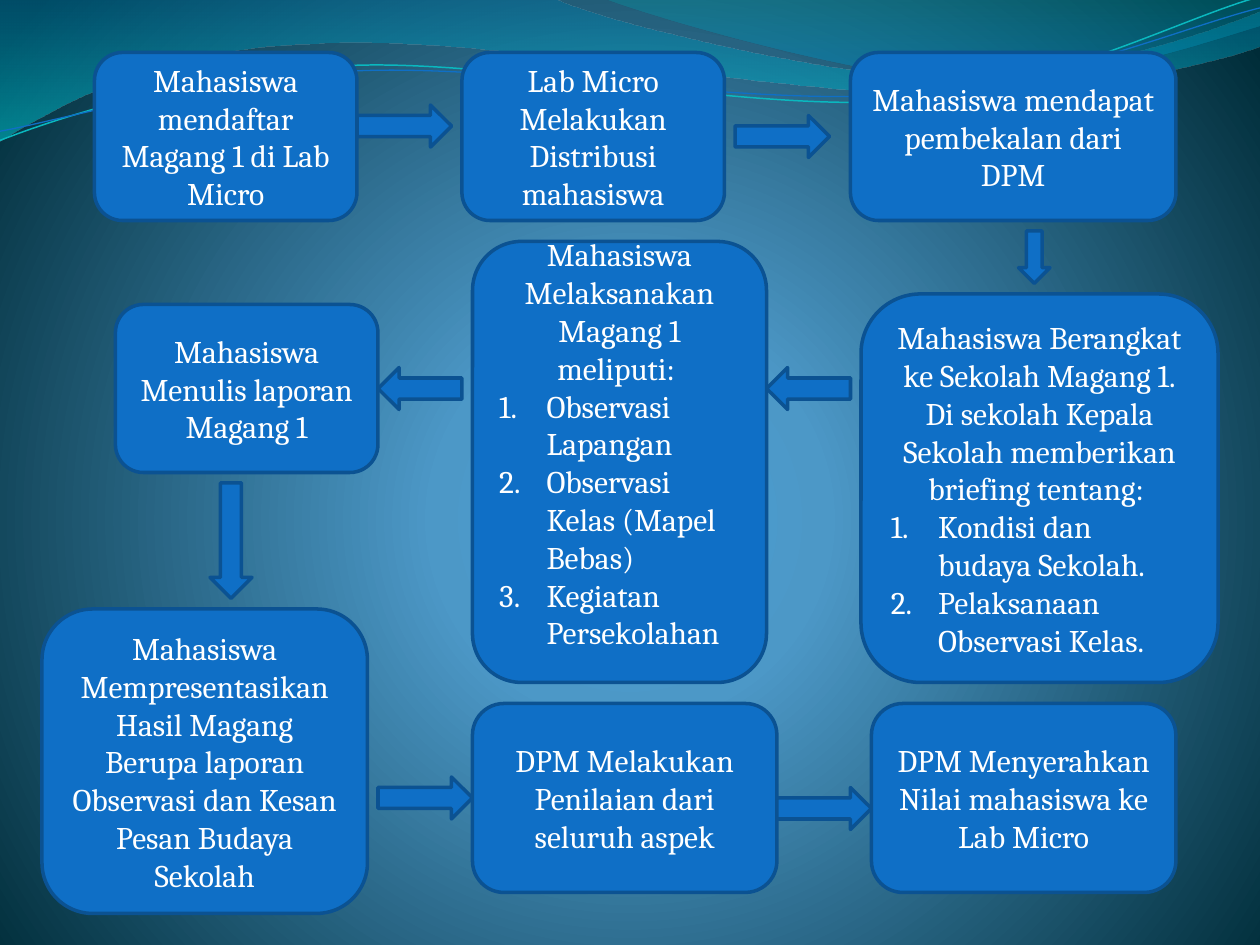
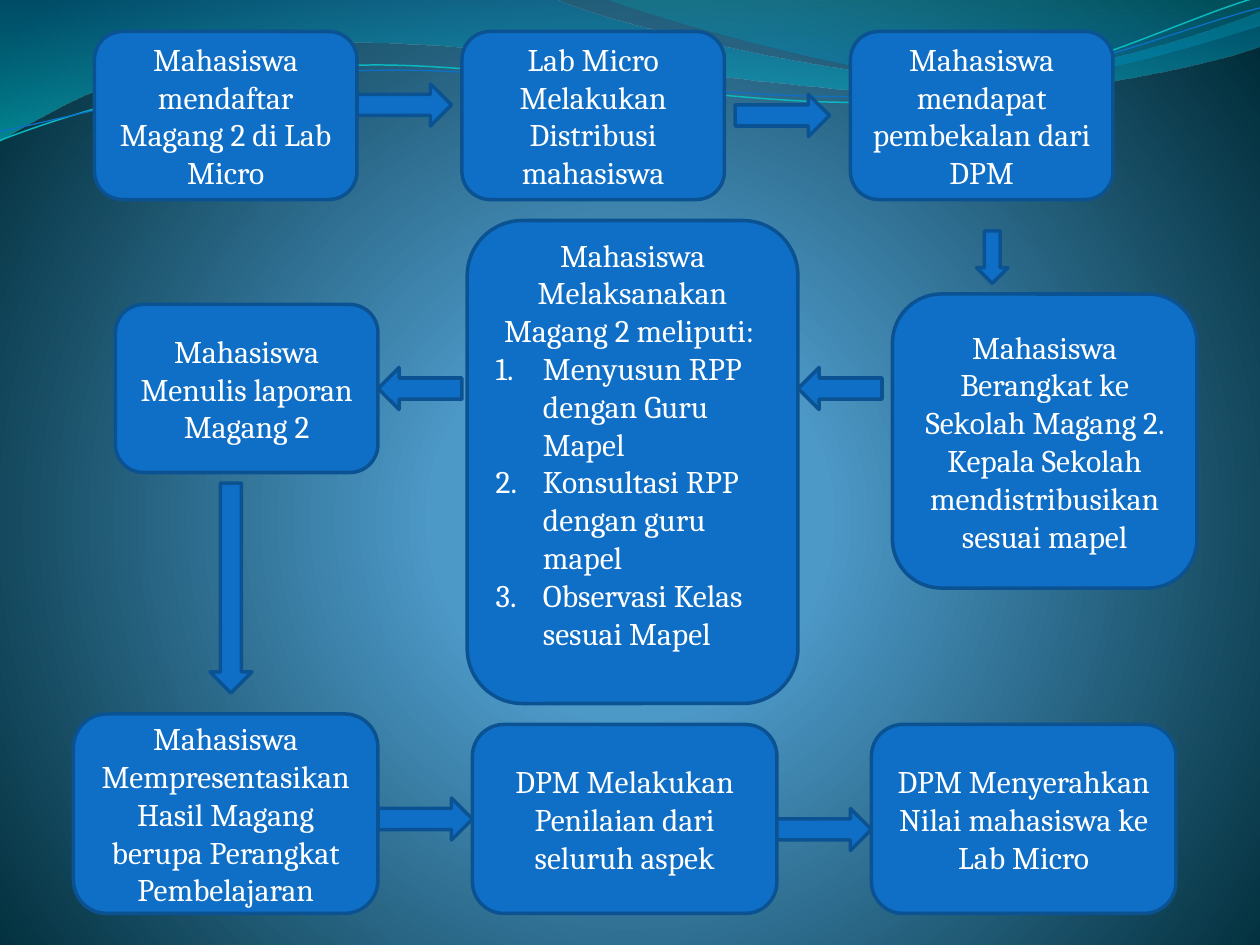
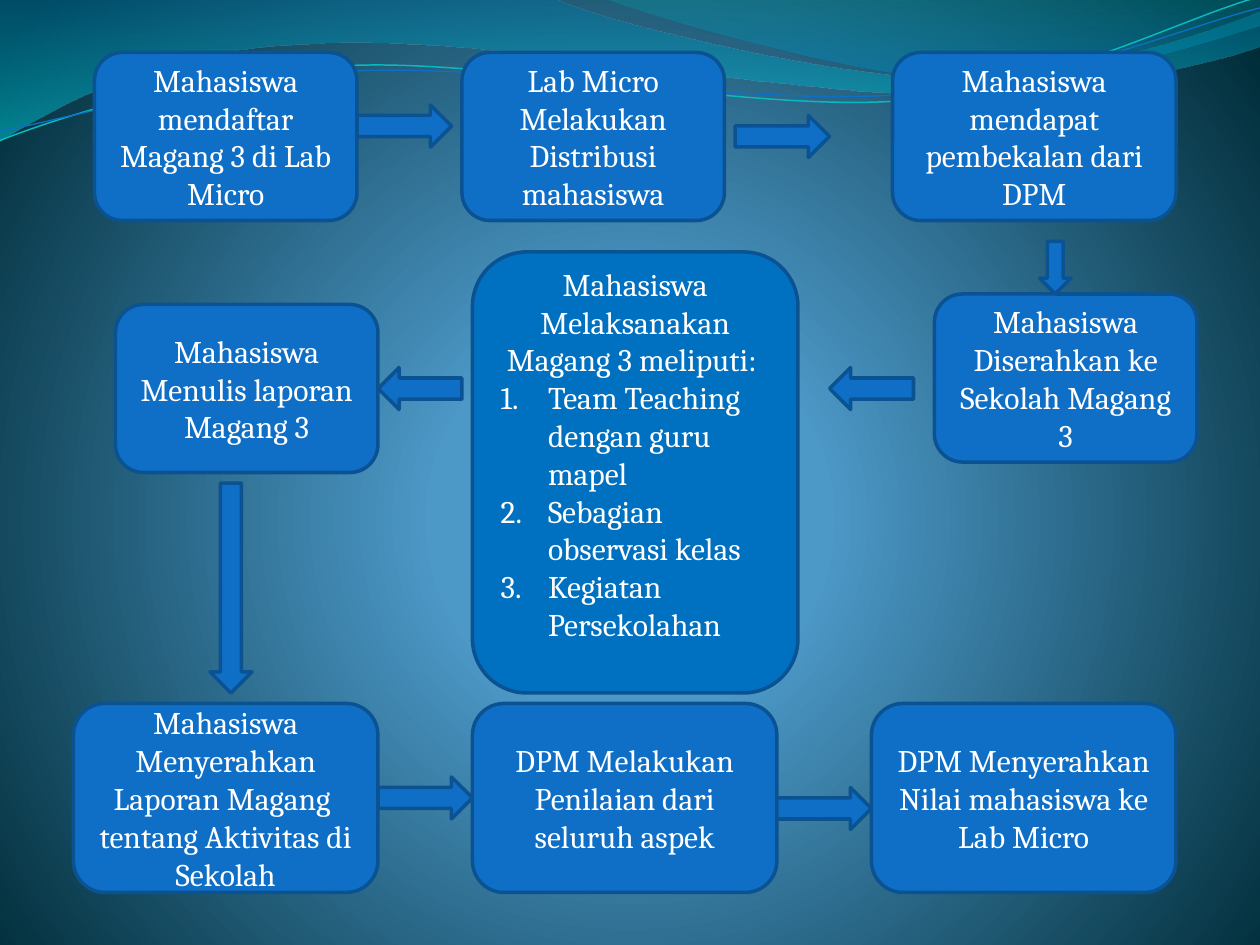
from dataclasses import dataclass

from lxml import etree
from pptx import Presentation
from pptx.dml.color import RGBColor
from pptx.enum.shapes import MSO_SHAPE
from pptx.enum.text import MSO_ANCHOR, PP_ALIGN
from pptx.oxml import parse_xml
from pptx.oxml.ns import nsdecls, qn
from pptx.util import Pt

PX = 9525
ROUNDED = MSO_SHAPE.ROUNDED_RECTANGLE
RIGHT, DOWN = MSO_SHAPE.RIGHT_ARROW, MSO_SHAPE.DOWN_ARROW
CENTER, LEFT = PP_ALIGN.CENTER, PP_ALIGN.LEFT
MIDDLE = MSO_ANCHOR.MIDDLE


@dataclass(frozen=True)
class Theme:
    font: str = "Cambria"
    size: int = 18
    text: str = "FFFFFF"
    box: str = "0F6FC6"
    core_box: str = "0070C0"
    outline: str = "0B5292"
    outline_width: int = 2
    strand: str = "0AB8BF"
    # Gradient stops: position %, colour, opacity %
    glow: tuple = ((0, "4AA0D6", 100), (25, "4C98C7", 100), (100, "002C38", 100))
    wide_wave: tuple = ((0, "0074A1", 45), (100, "00C6CF", 55))
    short_wave: tuple = ((0, "00A1A9", 30), (80, "008BBF", 45))


THEME = Theme()
DOWNWARD = '<a:lin ang="5400000" scaled="1"/>'
FROM_CENTRE = ('<a:path path="circle"><a:fillToRect l="10000" t="110000" '
               'r="10000" b="100000"/></a:path>')


def set_gradient(host, stops, direction):
    """Replace the first gradient fill inside the element host."""
    stop_xml = "".join(
        f'<a:gs pos="{pos * 1000}"><a:srgbClr val="{color}">'
        f'<a:alpha val="{opacity * 1000}"/></a:srgbClr></a:gs>'
        for pos, color, opacity in stops)
    old = host.find(".//" + qn("a:gradFill"))
    old.getparent().replace(old, parse_xml(
        f'<a:gradFill {nsdecls("a")} rotWithShape="1">'
        f'<a:gsLst>{stop_xml}</a:gsLst>{direction}</a:gradFill>'))


def add_block(slide, kind, bounds, fill):
    block = slide.shapes.add_shape(kind, *(value * PX for value in bounds))
    block.shadow.inherit = False
    block.fill.solid()
    block.fill.fore_color.rgb = RGBColor.from_string(fill)
    block.line.color.rgb = RGBColor.from_string(THEME.outline)
    block.line.width = Pt(THEME.outline_width)
    return block


prs = Presentation()
prs.slide_width, prs.slide_height = 960 * PX, 720 * PX
blank = prs.slide_layouts[6]
for placeholder in list(blank.placeholders):
    blank.shapes.element.remove(placeholder.element)

prs.slide_master.background.fill.gradient()
set_gradient(prs.slide_master.element, THEME.glow, FROM_CENTRE)

# Each step of a path is one end point, or two control points and an end point
WAVES = [
    (THEME.wide_wave, (0, 0), [
        [(422, -1)],
        [(457, 16), (637, 60), (728, 60)],
        [(819, 60), (920, 25), (960, 9)],
        [(961, 35)],
        [(944, 42), (835, 73), (716, 72)],
        [(597, 72), (367, 27), (247, 33)],
        [(124, 35), (44, 80), (-1, 108)],
        [(0, 0)]]),
    (THEME.short_wave, (460, -1), [
        [(489, 11), (655, 60), (738, 62)],
        [(822, 66), (923, 31), (960, 20)],
        [(960, 0)],
        [(460, -1)]]),
]
STRANDS = [
    (THEME.strand, 0.85, (0, 107), [
        [(46, 89), (152, 55), (266, 50)],
        [(379, 45), (569, 85), (684, 77)],
        [(800, 68), (900, 14), (958, -2)]]),
    (THEME.box, 0.75, (0, 100), [
        [(45, 92), (157, 59), (272, 54)],
        [(387, 49), (573, 81), (688, 72)],
        [(803, 64), (903, 20), (960, 6)]]),
]

first_slide = prs.slides.add_slide(blank)
ribbons = []
for start, steps, closed in ([(start, steps, True) for _, start, steps in WAVES]
                             + [(start, steps, False) for _, _, start, steps in STRANDS]):
    builder = first_slide.shapes.build_freeform(*start, scale=PX)
    builder.add_line_segments([point for step in steps for point in step], close=closed)
    ribbon = builder.convert_to_shape()
    ribbon.shadow.inherit = False
    ribbons.append(ribbon)

    # Turn the three segments of every curved step into one Bézier curve
    segments = iter(ribbon.element.findall(".//" + qn("a:lnTo")))
    for step in steps:
        parts = [next(segments) for _ in step]
        if len(parts) == 3:
            curve = etree.Element(qn("a:cubicBezTo"))
            parts[0].addprevious(curve)
            for part in parts:
                curve.append(part[0])
                part.getparent().remove(part)

for ribbon, (stops, _, _) in zip(ribbons, WAVES):
    ribbon.fill.gradient()
    set_gradient(ribbon.element, stops, DOWNWARD)
    ribbon.line.fill.background()
for ribbon, (color, width, _, _) in zip(ribbons[len(WAVES):], STRANDS):
    ribbon.fill.background()
    ribbon.line.color.rgb = RGBColor.from_string(color)
    ribbon.line.width = Pt(width)
for ribbon in ribbons:
    blank.shapes.element.append(ribbon.element)

# What differs between the three internships; bounds are left, top, width, height
INTERNSHIPS = [
    dict(top=40, bottom=536, briefing=(648, 248), core_fill=THEME.box,
         school=(656, 224, 272, 296), core=(360, 184, 224, 336), result=(32, 464, 248, 232),
         to_school=(776, 176), to_core=584, to_result=88,
         school_text=["Mahasiswa Berangkat ke Sekolah Magang 1.",
                      "Di sekolah Kepala Sekolah memberikan briefing tentang: "],
         school_items=["Kondisi dan budaya Sekolah.", "Pelaksanaan Observasi Kelas."],
         core_items=["Observasi Lapangan", "Observasi Kelas (Mapel Bebas)",
                     "Kegiatan Persekolahan"],
         result_text="Mahasiswa Mempresentasikan Hasil Magang Berupa laporan "
                     "Observasi dan Kesan Pesan Budaya Sekolah"),
    dict(top=24, bottom=552, briefing=(648, 200), core_fill=THEME.box,
         school=(680, 224, 232, 224), core=(356, 168, 252, 368), result=(56, 544, 232, 152),
         to_school=(744, 176), to_core=608, to_result=160,
         school_text=["Mahasiswa Berangkat ke Sekolah Magang 2. "
                      "Kepala Sekolah mendistribusikan sesuai mapel"],
         school_items=[],
         core_items=["Menyusun RPP dengan Guru Mapel", "Konsultasi RPP dengan guru mapel",
                     "Observasi Kelas sesuai Mapel"],
         result_text="Mahasiswa Mempresentasikan Hasil Magang berupa Perangkat Pembelajaran"),
    dict(top=40, bottom=536, briefing=(680, 216), core_fill=THEME.core_box,
         school=(712, 224, 200, 128), core=(360, 192, 248, 336), result=(56, 536, 232, 144),
         to_school=(792, 184), to_core=632, to_result=160,
         school_text=["Mahasiswa Diserahkan ke Sekolah Magang 3"],
         school_items=[],
         core_items=["Team Teaching dengan guru mapel", "Sebagian observasi kelas",
                     "Kegiatan Persekolahan"],
         result_text="Mahasiswa Menyerahkan Laporan Magang  tentang Aktivitas di Sekolah"),
]
ITEM_INDENT = 36
CORE_BOTTOM_INSET = 33

for number, plan in enumerate(INTERNSHIPS, start=1):
    slide = first_slide if number == 1 else prs.slides.add_slide(blank)
    top, bottom = plan["top"], plan["bottom"]
    briefing_left, briefing_width = plan["briefing"]
    stages = [
        ((72, top, 200, 128), [f"Mahasiswa mendaftar Magang {number} di Lab Micro"], []),
        ((352, top, 200, 128), ["Lab Micro Melakukan Distribusi mahasiswa"], []),
        ((briefing_left, top, briefing_width, 128),
         ["Mahasiswa mendapat pembekalan dari DPM"], []),
        (plan["school"], plan["school_text"], plan["school_items"]),
        (plan["core"], [f"Mahasiswa Melaksanakan Magang {number} meliputi: "],
         plan["core_items"]),
        ((88, 232, 200, 128), [f"Mahasiswa Menulis laporan Magang {number}"], []),
        (plan["result"], [plan["result_text"]], []),
        ((360, bottom, 232, 144), ["DPM Melakukan Penilaian dari seluruh aspek"], []),
        ((664, bottom, 232, 144), ["DPM Menyerahkan Nilai mahasiswa ke Lab Micro"], []),
    ]
    for bounds, sentences, items in stages:
        is_core = bounds == plan["core"]
        stage = add_block(slide, ROUNDED, bounds, plan["core_fill"] if is_core else THEME.box)
        frame = stage.text_frame
        frame.word_wrap = True
        frame.vertical_anchor = MIDDLE
        if is_core:
            frame.margin_bottom = CORE_BOTTOM_INSET * PX
        frame.text = "\n".join(sentences + items)
        for i, paragraph in enumerate(frame.paragraphs):
            paragraph.alignment = CENTER
            if i >= len(sentences):
                paragraph.alignment = LEFT
                properties = paragraph._p.get_or_add_pPr()
                properties.set("marL", str(ITEM_INDENT * PX))
                properties.set("indent", str(-ITEM_INDENT * PX))
                etree.SubElement(properties, qn("a:buAutoNum"), type="arabicPeriod")
            font = paragraph.runs[0].font
            font.name = THEME.font
            font.size = Pt(THEME.size)
            font.color.rgb = RGBColor.from_string(THEME.text)

    arrows = [
        (RIGHT, (272, top + 40, 72, 32), 0),
        (RIGHT, (560, top + 48, 72, 32), 0),
        (RIGHT, (288, bottom + 56, 72, 32), 0),
        (RIGHT, (592, bottom + 64, 72, 32), 0),
        (DOWN, (*plan["to_school"], 24, 40), 0),
        (DOWN, (160, 368, 32, plan["to_result"]), 0),
        (RIGHT, (plan["to_core"], 280, 64, 32), 180),
        (RIGHT, (288, 280, 64, 32), 180),
    ]
    for kind, bounds, turn in arrows:
        add_block(slide, kind, bounds, THEME.box).rotation = turn

prs.save("out.pptx")
